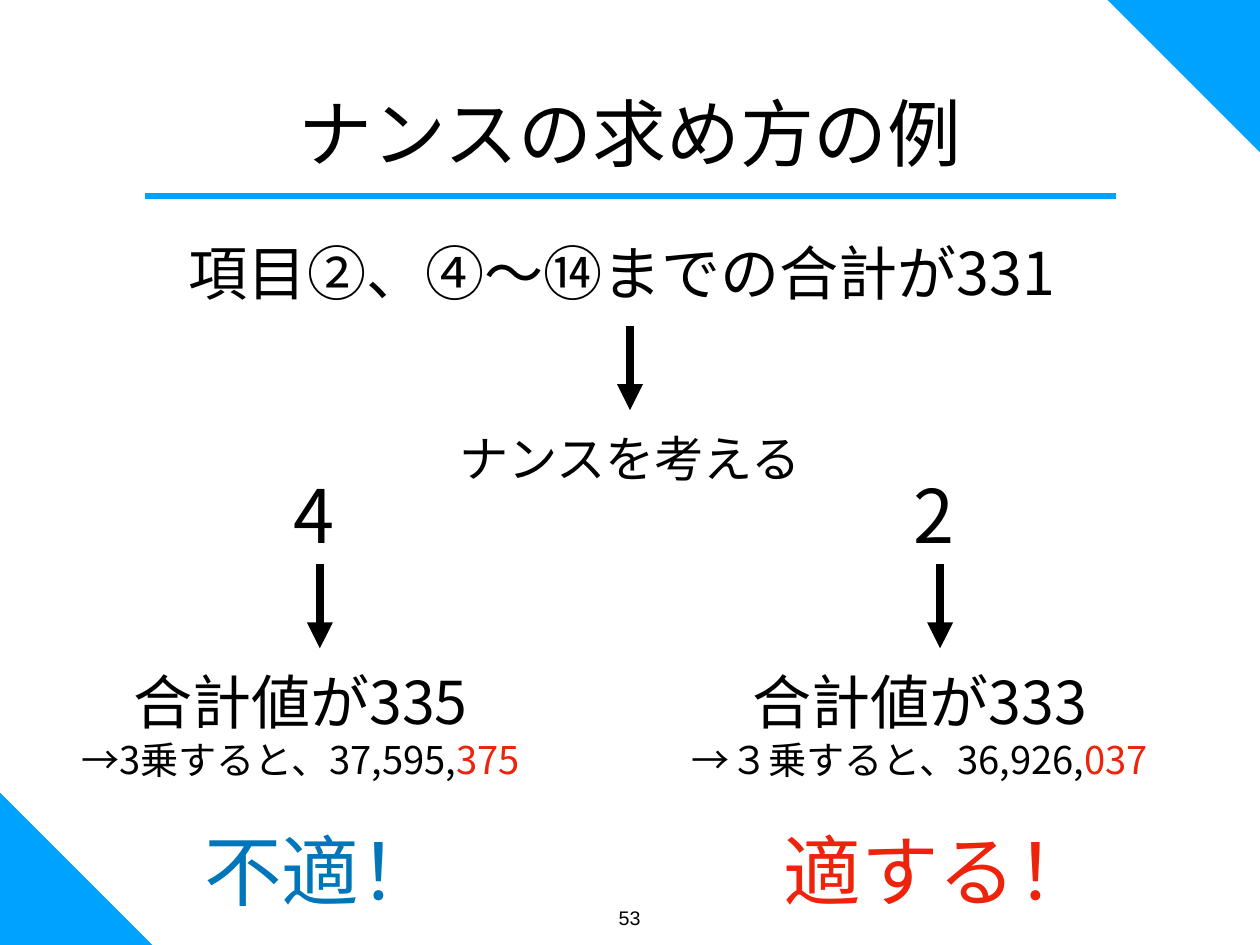
from pptx import Presentation
from pptx.dml.color import RGBColor
from pptx.enum.shapes import MSO_CONNECTOR
from pptx.enum.text import MSO_ANCHOR, PP_ALIGN
from pptx.oxml.ns import qn
from pptx.util import Inches, Pt
from lxml import etree

STRAIGHT = MSO_CONNECTOR.STRAIGHT
MIDDLE, TOP = MSO_ANCHOR.MIDDLE, MSO_ANCHOR.TOP
CENTER = PP_ALIGN.CENTER
BLACK = RGBColor(0x00, 0x00, 0x00)
SKY = RGBColor(0x00, 0xA2, 0xFF)
BLUE = RGBColor(0x00, 0x76, 0xBA)
RED = RGBColor(0xEE, 0x23, 0x0C)
JAPANESE = "Noto Sans CJK JP"
WIDTH, HEIGHT, CORNER = 14.22, 10.67, 1.72
MARGIN = 0.06


def add_span(para, text, size, color=BLACK, font=JAPANESE):
    """Append a formatted run to a paragraph."""
    span = para.add_run()
    span.text = text
    span.font.size = Pt(size)
    span.font.color.rgb = color
    span.font.name = font
    east_asian = etree.SubElement(span.font._element, qn("a:ea"))
    east_asian.set("typeface", font)


def format_frame(frame, anchor=MIDDLE):
    """Give a text frame its insets, anchor and centred first paragraph."""
    frame.margin_left = frame.margin_right = Inches(MARGIN)
    frame.margin_top = frame.margin_bottom = Inches(MARGIN)
    frame.vertical_anchor = anchor
    frame.word_wrap = False
    frame.paragraphs[0].alignment = CENTER
    return frame


def add_box(page, left, top, width, height, anchor=MIDDLE):
    """Add an empty text box and return its frame."""
    box = page.shapes.add_textbox(Inches(left), Inches(top), Inches(width), Inches(height))
    return format_frame(box.text_frame, anchor)


def add_label(page, text, left, top, width, height, size, color=BLACK):
    """Add a text box with one centred line."""
    frame = add_box(page, left, top, width, height)
    add_span(frame.paragraphs[0], text, size, color)


def add_title(page, text):
    """Place and format the title placeholder."""
    title = page.shapes.title
    title.left, title.top = Inches(3.06), Inches(1.02)
    title.width, title.height = Inches(8.1), Inches(0.94)
    add_span(format_frame(title.text_frame).paragraphs[0], text, 60)


def add_line(page, start, end, color, weight):
    """Add a straight line without shadow."""
    line = page.shapes.add_connector(STRAIGHT, *(Inches(value) for value in start + end))
    line.line.color.rgb = color
    line.line.width = Pt(weight)
    etree.SubElement(line._element.spPr, qn("a:effectLst"))
    return line


def add_down_arrow(page, x, top):
    """Add a thick black arrow pointing down."""
    arrow = add_line(page, (x, top), (x, top + 0.95), BLACK, 7)
    etree.SubElement(arrow.line._get_or_add_ln(), qn("a:tailEnd")).set("type", "triangle")


def add_corner(page, points):
    """Add a solid triangle in a corner of the slide."""
    first, *others = [(Inches(x), Inches(y)) for x, y in points]
    builder = page.shapes.build_freeform(*first)
    builder.add_line_segments(others, close=True)
    corner = builder.convert_to_shape()
    corner.shadow.inherit = False
    corner.fill.solid()
    corner.fill.fore_color.rgb = SKY
    corner.line.fill.background()


def add_sum(page, left, width, total, lead, ending):
    """Add a total with its cube, whose last digits are red."""
    frame = add_box(page, left, 7.4, width, 1.55)
    add_span(frame.paragraphs[0], total, 48)
    cube = frame.add_paragraph()
    cube.alignment = CENTER
    add_span(cube, lead, 31)
    add_span(cube, ending, 31, RED)


def add_page_number(page):
    """Add the slide number at the bottom."""
    frame = add_box(page, 6.92, 10.17, 0.37, 0.35, TOP)
    add_span(frame.paragraphs[0], "53", 16, font="Arial")


def main():
    """Build the slide and save it."""
    deck = Presentation()
    deck.slide_width, deck.slide_height = Inches(WIDTH), Inches(HEIGHT)
    page = deck.slides.add_slide(deck.slide_layouts[5])

    add_corner(page, [(0, HEIGHT - CORNER), (0, HEIGHT), (CORNER, HEIGHT)])
    add_corner(page, [(WIDTH, CORNER), (WIDTH, 0), (WIDTH - CORNER, 0)])
    add_line(page, (1.64, 2.21), (12.59, 2.21), SKY, 5)
    add_page_number(page)
    add_title(page, "ナンスの求め方の例")

    add_label(page, "項目②、④〜⑭までの合計が331", 1.91, 2.68, 10.22, 0.78, 48)
    add_down_arrow(page, WIDTH / 2, 3.68)
    add_label(page, "ナンスを考える", 5.12, 4.83, 3.98, 0.67, 40)

    for x, nonce in ((3.61, "4"), (10.61, "2")):
        add_label(page, nonce, x - 0.43, 5.33, 0.72, 0.94, 60)
        add_down_arrow(page, x, 6.37)

    add_sum(page, 0.54, 5.7, "合計値が335", "→3乗すると、37,595,", "375")
    add_sum(page, 7.47, 5.82, "合計値が333", "→３乗すると、36,926,", "037")
    add_label(page, "不適！", 2.24, 9.32, 2.75, 0.99, 63, BLUE)
    add_label(page, "適する！", 8.78, 9.32, 3.63, 0.99, 63, RED)
    deck.save("out.pptx")


if __name__ == "__main__":
    main()
